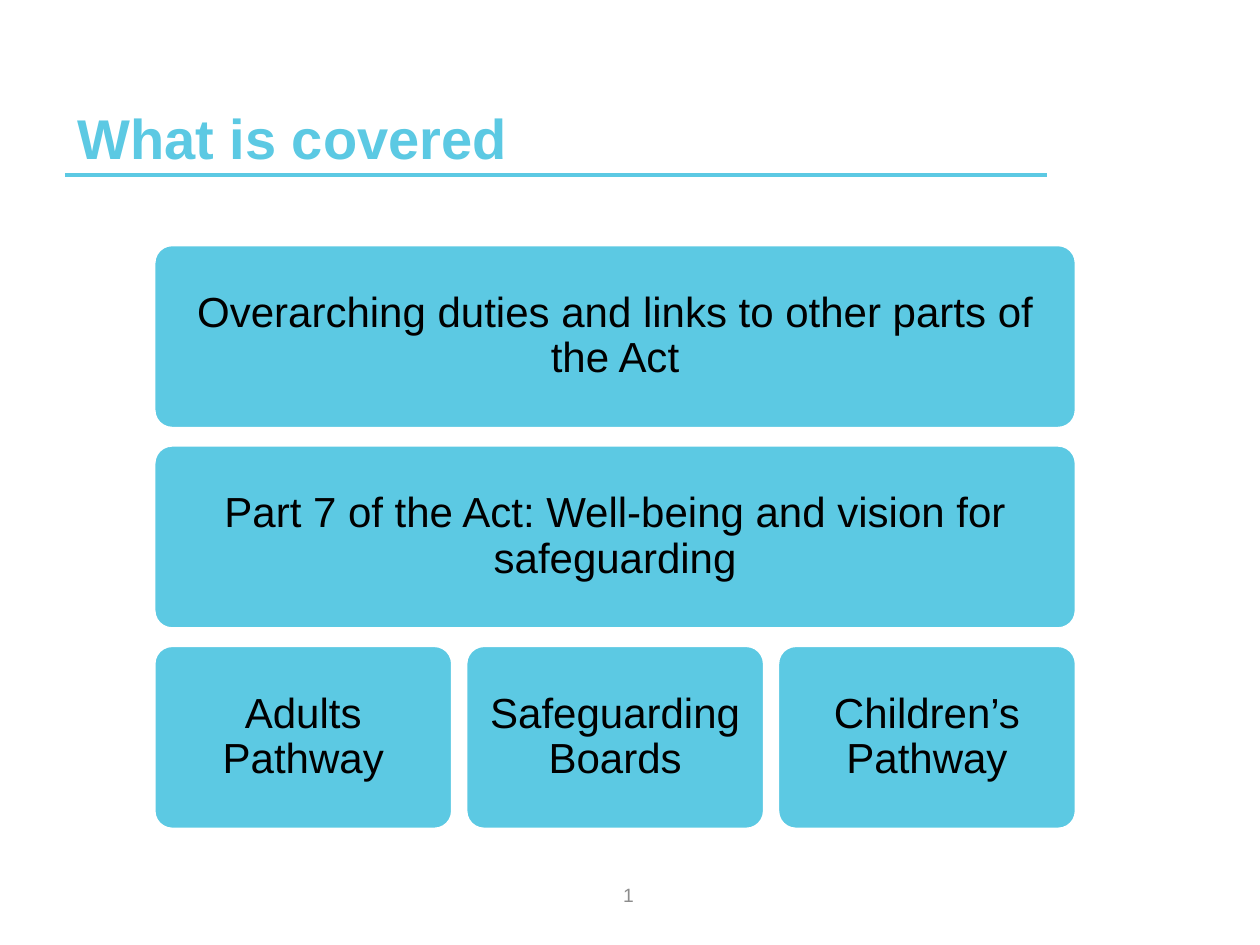
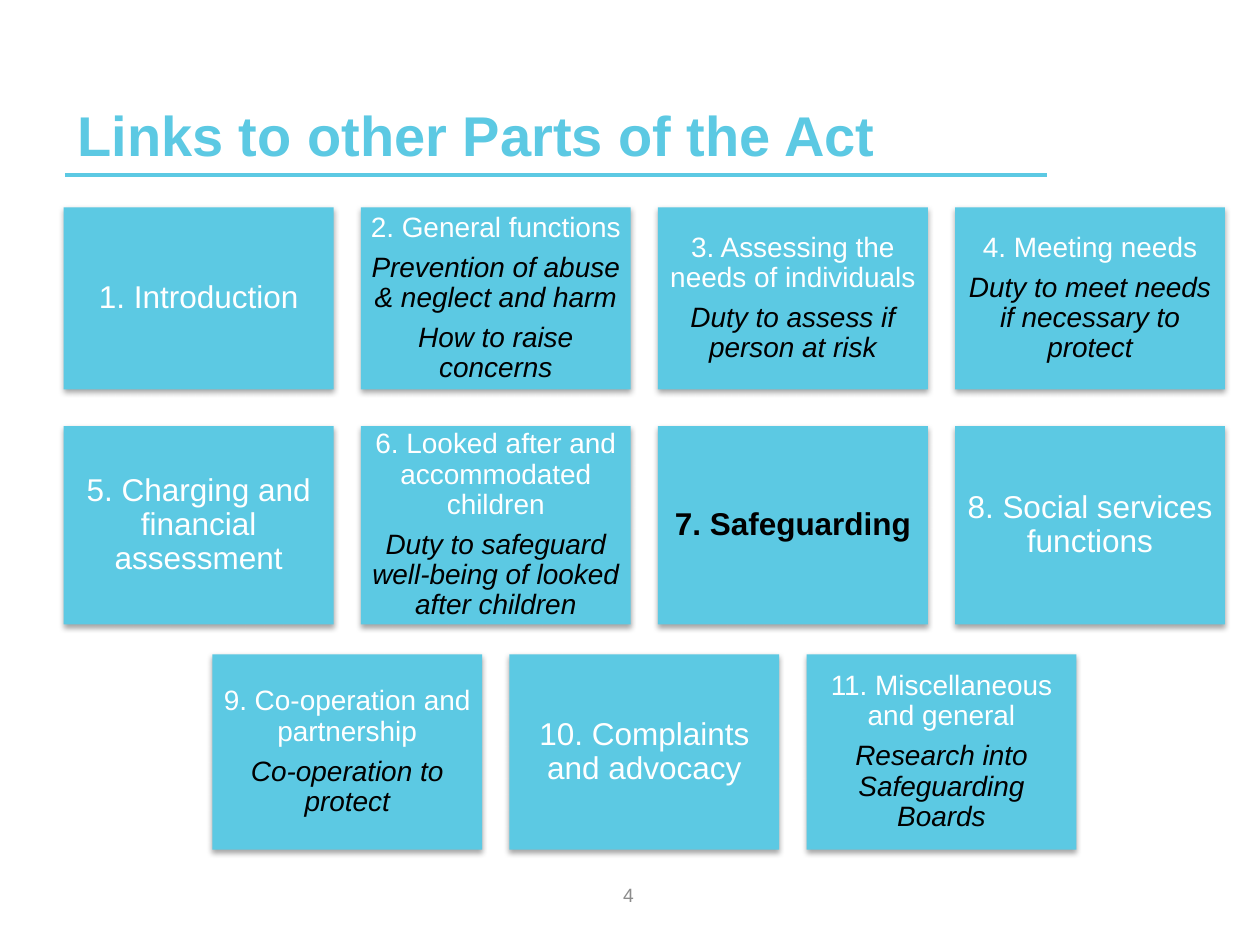
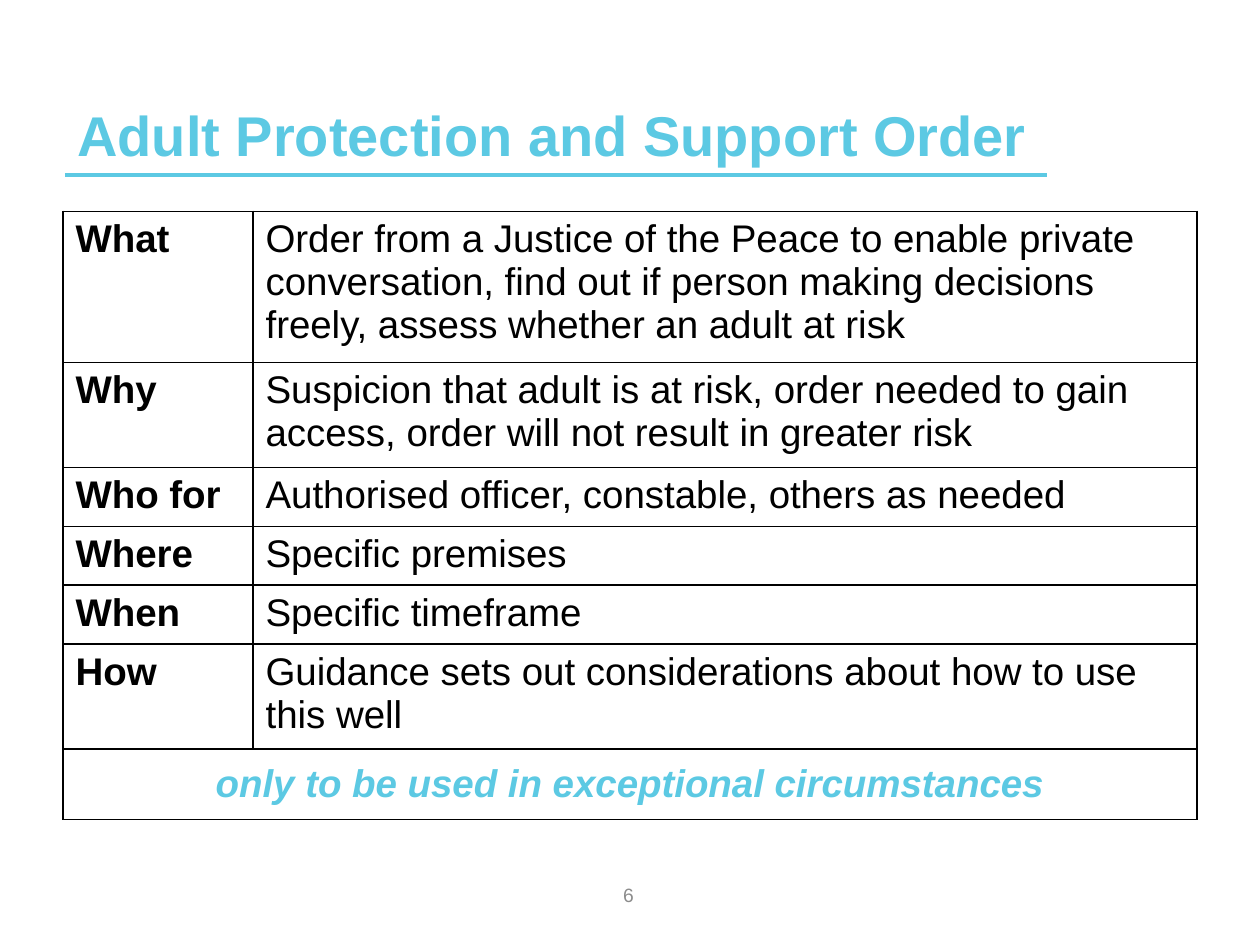
from collections import namedtuple

from lxml import etree
from pptx import Presentation
from pptx.dml.color import RGBColor
from pptx.enum.shapes import MSO_CONNECTOR, MSO_SHAPE
from pptx.enum.text import MSO_ANCHOR, PP_ALIGN
from pptx.oxml import parse_xml
from pptx.oxml.ns import nsdecls, qn
from pptx.util import Cm, Pt

LEFT, CENTER = PP_ALIGN.LEFT, PP_ALIGN.CENTER
TOP, MIDDLE, BOTTOM = MSO_ANCHOR.TOP, MSO_ANCHOR.MIDDLE, MSO_ANCHOR.BOTTOM
RECTANGLE, ROUNDED = MSO_SHAPE.RECTANGLE, MSO_SHAPE.ROUNDED_RECTANGLE
STRAIGHT = MSO_CONNECTOR.STRAIGHT

SKY = RGBColor(0x5C, 0xC9, 0xE3)
BLACK = RGBColor(0, 0, 0)
WHITE = RGBColor(0xFF, 0xFF, 0xFF)
GREY = RGBColor(0x8C, 0x8C, 0x8C)
FONT = "Arial"

Box = namedtuple("Box", "left top width height")
RULE = Box(1.31, 3.53, 19.8, 0)
PAGE_NUMBER = Box(9.71, 17.53, 5.92, 1.02)

COVERED = [
    ["Overarching duties and links to other parts of the Act"],
    ["Part 7 of the Act: Well-being and vision for safeguarding"],
    ["Adults Pathway", "Safeguarding Boards", "Children’s Pathway"],
]

ACT_PARTS = [
    (4.18, 3.67, [
        ("1. Introduction",),
        ("2. General functions", "Prevention of abuse & neglect and harm", "How to raise concerns"),
        ("3. Assessing the needs of individuals", "Duty to assess if person at risk"),
        ("4. Meeting needs", "Duty to meet needs if necessary to protect"),
    ]),
    (8.59, 4, [
        ("5. Charging and financial assessment",),
        ("6. Looked after and accommodated children",
         "Duty to safeguard well-being of looked after children"),
        ("7. Safeguarding",),
        ("8. Social services functions",),
    ]),
    (13.19, 3.94, [
        ("9. Co-operation and partnership", "Co-operation to protect"),
        ("10. Complaints and advocacy",),
        ("11. Miscellaneous and general", "Research into Safeguarding Boards"),
    ]),
]
CURRENT_PART = "7. Safeguarding"

ORDER_ROWS = [
    ("What", "Order from a Justice of the Peace to enable private conversation, "
             "find out if person making decisions freely, assess whether an adult at risk"),
    ("Why", "Suspicion that adult is at risk, order needed to gain access, "
            "order will not result in greater risk"),
    ("Who for", "Authorised officer, constable, others as needed"),
    ("Where", "Specific premises"),
    ("When", "Specific timeframe"),
    ("How", "Guidance sets out considerations about how to use this well"),
]
ORDER_WARNING = "only to be used in exceptional circumstances"
ROW_HEIGHT, WARNING_HEIGHT = 1.04, 1.42


def lengths(box):
    return [Cm(value) for value in box]


def write_text(frame, text, *, size, color=BLACK, bold=False, italic=False,
               align=LEFT, spacing=None, after=None):
    paragraph = frame.add_paragraph() if frame.text else frame.paragraphs[0]
    paragraph.alignment = align
    paragraph.line_spacing = spacing
    if after is not None:
        paragraph.space_after = Pt(after)
    run = paragraph.add_run()
    run.text = text
    font = run.font
    font.name, font.size, font.color.rgb = FONT, Pt(size), color
    font.bold, font.italic = bold, italic


def add_label(slide, box, text, anchor, **style):
    frame = slide.shapes.add_textbox(*lengths(box)).text_frame
    frame.word_wrap = True
    frame.vertical_anchor = anchor
    write_text(frame, text, **style)


def add_card(slide, box, preset, inset):
    card = slide.shapes.add_shape(preset, *lengths(box))
    card.shadow.inherit = False
    card.fill.solid()
    card.fill.fore_color.rgb = SKY
    card.line.fill.background()
    frame = card.text_frame
    frame.word_wrap = True
    frame.vertical_anchor = MIDDLE
    frame.margin_left = frame.margin_right = Cm(inset)
    frame.margin_top = frame.margin_bottom = Cm(inset)
    return card


def write_card(card, text, size, **style):
    write_text(card.text_frame, text, size=size, align=CENTER, spacing=0.9,
               after=0.35 * size, **style)


def cast_shadow(shape):
    effects = shape.element.spPr.find(qn("a:effectLst"))
    effects.append(parse_xml(
        f'<a:outerShdw {nsdecls("a")} blurRad="40000" dist="23000" dir="5400000" rotWithShape="0">'
        '<a:srgbClr val="000000"><a:alpha val="35000"/></a:srgbClr></a:outerShdw>'))


def add_page(deck, title, number, title_top=0.74):
    slide = deck.slides.add_slide(deck.slide_layouts[6])
    rule = slide.shapes.add_connector(
        STRAIGHT, Cm(RULE.left), Cm(RULE.top), Cm(RULE.left + RULE.width), Cm(RULE.top))
    rule.line.color.rgb = SKY
    rule.line.width = Pt(2)
    etree.SubElement(rule.element.spPr, qn("a:effectLst"))
    add_label(slide, Box(RULE.left, title_top, RULE.width, 2.77), title, BOTTOM,
              size=32, color=SKY, bold=True)
    add_label(slide, PAGE_NUMBER, str(number), MIDDLE, size=11, color=GREY, align=CENTER)
    return slide


def add_covered(slide, box, row_gap=0.33, column_gap=0.26):
    height = (box.height - row_gap * (len(COVERED) - 1)) / len(COVERED)
    for row, topics in enumerate(COVERED):
        width = (box.width - column_gap * (len(topics) - 1)) / len(topics)
        for column, topic in enumerate(topics):
            place = Box(box.left + column * (width + column_gap),
                        box.top + row * (height + row_gap), width, height)
            card = add_card(slide, place, ROUNDED, 0.25)
            card.adjustments[0] = 0.1
            card.line.color.rgb = WHITE
            card.line.width = Pt(2)
            write_card(card, topic, 24)


def add_act_parts(slide, left, total_width, width=5.44, gap=0.55):
    for top, height, parts in ACT_PARTS:
        row_width = len(parts) * (width + gap) - gap
        start = left + (total_width - row_width) / 2
        for column, (heading, *duties) in enumerate(parts):
            place = Box(start + column * (width + gap), top, width, height)
            card = add_card(slide, place, RECTANGLE, 0.18)
            cast_shadow(card)
            size = 16 if duties else 18
            current = heading == CURRENT_PART
            write_card(card, heading, size, color=BLACK if current else WHITE, bold=current)
            for duty in duties:
                write_card(card, duty, size, italic=True)


def outline_cell(cell):
    properties = cell._tc.get_or_add_tcPr()
    for side in ("lnL", "lnR", "lnT", "lnB"):
        properties.append(parse_xml(
            f'<a:{side} {nsdecls("a")} w="12700"><a:solidFill><a:srgbClr val="{BLACK}"/>'
            f'</a:solidFill></a:{side}>'))
    cell.fill.background()


def add_order_table(slide, box, label_width):
    last = len(ORDER_ROWS)
    frame = slide.shapes.add_table(last + 1, 2, *lengths(box))
    table = frame.table
    table.first_row = table.horz_banding = False
    table.columns[0].width = Cm(label_width)
    table.columns[1].width = Cm(box.width - label_width)
    for row in table.rows:
        row.height = Cm(ROW_HEIGHT)
    table.rows[last].height = Cm(WARNING_HEIGHT)
    frame.height = Cm(box.height)
    for cell in table.iter_cells():
        outline_cell(cell)
        cell.vertical_anchor = TOP
    for index, (question, answer) in enumerate(ORDER_ROWS):
        write_text(table.cell(index, 0).text_frame, question, size=22, bold=True)
        write_text(table.cell(index, 1).text_frame, answer, size=22)
    warning = table.cell(last, 0)
    warning.merge(table.cell(last, 1))
    warning.vertical_anchor = MIDDLE
    write_text(warning.text_frame, ORDER_WARNING, size=22, color=SKY,
               bold=True, italic=True, align=CENTER)


def main():
    deck = Presentation()
    deck.slide_width, deck.slide_height = Cm(25.4), Cm(19.05)
    add_covered(add_page(deck, "What is covered", 1, title_top=0.79),
                Box(3.1, 4.93, 18.6, 11.79))
    add_act_parts(add_page(deck, "Links to other Parts of the Act", 4), 1.28, 23.42)
    add_order_table(add_page(deck, "Adult Protection and Support Order", 6),
                    Box(1.27, 4.26, 22.86, 12.27), 3.83)
    deck.save("out.pptx")


if __name__ == "__main__":
    main()
